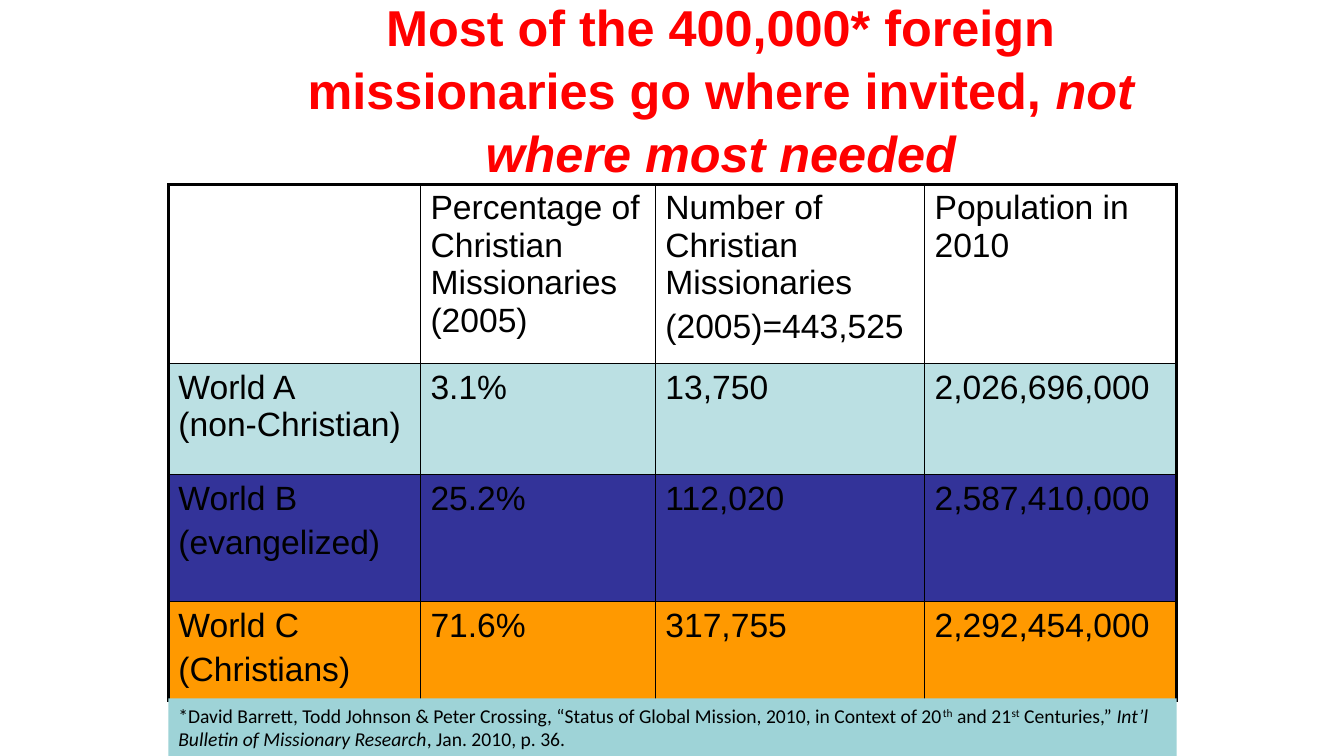
from lxml import etree
from pptx import Presentation, util as u
from pptx.dml.color import RGBColor
from pptx.enum import shapes, text
from pptx.oxml import ns

BLACK, RED, FOOTNOTE_FILL = "000000", "FF0000", "9ED3D7"


def paint(target, color):
    """Give a fill, or the fill of a font, one solid hex colour."""
    target.solid()
    target.fore_color.rgb = RGBColor.from_string(color)


def write(paragraph, wording, font_name, size, color, bold=False, italic=False):
    run = paragraph.add_run()
    run.text = wording
    run.font.name, run.font.size = font_name, u.Pt(size)
    run.font.bold, run.font.italic = bold, italic
    paint(run.font.fill, color)
    return run


prs = Presentation()
prs.slide_width, prs.slide_height = u.Inches(13.33), u.Inches(7.5)
slide = prs.slides.add_slide(prs.slide_layouts[6])
left, width = u.Inches(1.67), u.Inches(10)

# Headline
headline = slide.shapes.add_textbox(u.Inches(2.65), 0, u.Inches(9), u.Inches(1.75)).text_frame
headline.word_wrap = True
headline.vertical_anchor = text.MSO_ANCHOR.MIDDLE
claim = headline.paragraphs[0]
claim.alignment = text.PP_ALIGN.CENTER
claim.line_spacing = 1.04
write(claim, "Most of the 400,000* foreign missionaries go where invited, ", "Arial", 36, RED, bold=True)
write(claim, "not where most needed", "Arial", 36, RED, bold=True, italic=True)

# Missionaries and population by world
worlds = [
    (None, 1.78, ["", "Percentage of Christian Missionaries (2005)",
                  "Number of Christian Missionaries\n(2005)=443,525", "Population in 2010"]),
    ("BBE0E3", 1.1, ["World A\v(non-Christian)", "3.1%", "13,750", "2,026,696,000"]),
    ("333399", 1.26, ["World B\n(evangelized)", "25.2%", "112,020", "2,587,410,000"]),
    ("FF9900", 0.98, ["World C\n(Christians)", "71.6%", "317,755", "2,292,454,000"]),
]
column_widths = [2.5, 2.33, 2.67, 2.5]
last_row, last_column = len(worlds) - 1, len(column_widths) - 1

table = slide.shapes.add_table(len(worlds), len(column_widths), left, u.Inches(1.83),
                               width, u.Inches(5.12)).table
table.first_row = table.horz_banding = False
for column, column_width in zip(table.columns, column_widths):
    column.width = u.Inches(column_width)

for r, (world_fill, height, entries) in enumerate(worlds):
    table.rows[r].height = u.Inches(height)
    for c, entry in enumerate(entries):
        cell = table.cell(r, c)
        outer_edges = {"L": c == 0, "R": c == last_column, "T": r == 0, "B": r == last_row}
        for side, is_outer in outer_edges.items():
            border = etree.SubElement(cell._tc.get_or_add_tcPr(), ns.qn(f"a:ln{side}"),
                                      w=str(u.Pt(2.25 if is_outer else 1)))
            solid = etree.SubElement(border, ns.qn("a:solidFill"))
            etree.SubElement(solid, ns.qn("a:srgbClr"), val=BLACK)
        if world_fill:
            paint(cell.fill, world_fill)
        else:
            cell.fill.background()
        for n, line in enumerate(entry.split("\n")):
            paragraph = cell.text_frame.paragraphs[0] if n == 0 else cell.text_frame.add_paragraph()
            if n:
                paragraph.space_before = u.Pt(4.8)
            for k, part in enumerate(line.split("\v")):
                if k:
                    paragraph.add_line_break()
                if part:
                    write(paragraph, part, "Arial", 24, BLACK)

# Footnote
footnote = slide.shapes.add_shape(shapes.MSO_SHAPE.RECTANGLE, left, u.Inches(6.93),
                                  width, u.Inches(0.57))
footnote.shadow.inherit = False
paint(footnote.fill, FOOTNOTE_FILL)
footnote.line.fill.background()
footnote.text_frame.word_wrap = True
footnote.text_frame.vertical_anchor = text.MSO_ANCHOR.TOP
citation = footnote.text_frame.paragraphs[0]
citation.alignment = text.PP_ALIGN.LEFT
for wording, style in [
    ("*David Barrett, Todd Johnson & Peter Crossing, “Status of Global Mission, 2010, "
     "in Context of 20", ""),
    ("th", "superscript"), (" and 21", ""), ("st", "superscript"), (" Centuries,” ", ""),
    ("Int’l Bulletin of Missionary Research", "italic"), (", Jan. 2010, p. 36.", ""),
]:
    run = write(citation, wording, "Calibri", 14, BLACK, italic=style == "italic")
    if style == "superscript":
        run.font._element.set("baseline", "30000")

prs.save("out.pptx")
